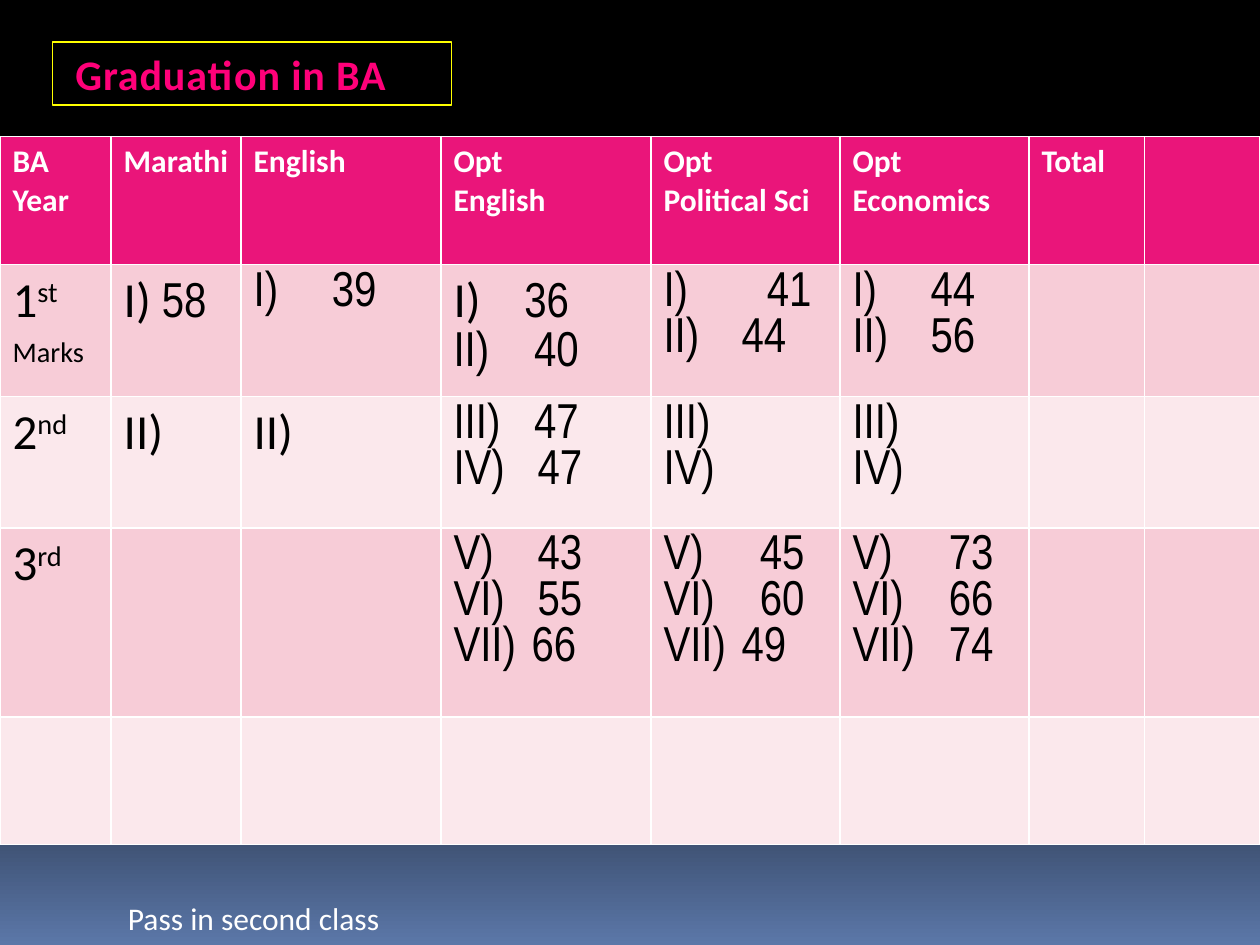
from lxml.etree import SubElement
from pptx import Presentation
from pptx.dml.color import RGBColor
from pptx.enum.text import MSO_ANCHOR, MSO_AUTO_SIZE, PP_ALIGN
from pptx.oxml.ns import qn
from pptx.util import Pt

COLORS = {
    "black": "000000", "white": "FFFFFF", "blue": "5B77A8",
    "yellow": "FFFF00", "pink": "FF0079", "dark pink": "B40055",
    "header": "EA157A", "odd row": "F7CCD7", "even row": "FBE8EC",
}
BODY, NARROW = "Calibri", "Arial Narrow"
COLUMN_WIDTHS = [63.5, 74.25, 114.25, 120, 108, 108, 66, 66]
ROW_HEIGHTS = [73, 74, 75, 108, 73]
LIST_INDENT = 44.64

HEADERS = ["BA\nYear", "Marathi", "English", "Opt\nEnglish",
           "Opt\nPolitical Sci", "Opt Economics", "Total"]
ORDINALS = [("1", "st"), ("2", "nd"), ("3", "rd")]
# (row, column): lines of (label, mark, tab position);
# a whole number as label starts an automatic Roman list there
MARKS = {
    (1, 2): [(1, "39", 0)],
    (1, 3): [("I)", "36", 40.5), ("II)", "40", 46)],
    (1, 4): [("I)", "41", 59), (2, "44", 0)],
    (1, 5): [(1, "44", 0), (2, "56", 0)],
    (2, 3): [("III)", "47", 46), ("IV)", "47", 48)],
    (2, 4): [("III)", "", 0), ("IV)", "", 0)],
    (2, 5): [("III)", "", 0), ("IV)", "", 0)],
    (3, 3): [("V)", "43", 48), ("VI)", "55", 48), (7, "66", 0)],
    (3, 4): [("V)", "45", 55), ("VI)", "60", 55), (7, "49", 0)],
    (3, 5): [("V)", "73", 55), ("VI)", "66", 55), ("VII)", "74", 55)],
}


def set_gradient(fill, stops):
    """Fill from top to bottom with two (position, colour name) stops."""
    fill.gradient()
    fill.gradient_angle = 270
    for stop, (position, name) in zip(fill.gradient_stops, stops):
        stop.position = position
        stop.color.rgb = RGBColor.from_string(COLORS[name])


def set_font(font, name, size, color, bold=False):
    font.name, font.size, font.bold = name, Pt(size), bold
    font.color.rgb = RGBColor.from_string(COLORS[color])


presentation = Presentation()
presentation.slide_width, presentation.slide_height = Pt(720), Pt(540)
slide = presentation.slides.add_slide(presentation.slide_layouts[5])
set_gradient(slide.background.fill, [(0.65, "black"), (1, "blue")])

# Title
title = slide.shapes.title
title.left, title.top, title.width, title.height = Pt(30), Pt(24), Pt(228), Pt(36)
title.line.color.rgb = RGBColor.from_string(COLORS["yellow"])
title.line.width = Pt(0.75)
title.text_frame.auto_size = MSO_AUTO_SIZE.NONE
title.text_frame.vertical_anchor = MSO_ANCHOR.MIDDLE
paragraph = title.text_frame.paragraphs[0]
paragraph.alignment = PP_ALIGN.LEFT
run = paragraph.add_run()
run.text = " Graduation in BA"
run.font.name, run.font.size, run.font.bold = BODY, Pt(24), True
set_gradient(run.font.fill, [(0.25, "pink"), (1, "dark pink")])
run.font._element.set("spc", "50")

# Table grid
table = slide.shapes.add_table(
    len(ROW_HEIGHTS), len(COLUMN_WIDTHS), Pt(0), Pt(78),
    Pt(sum(COLUMN_WIDTHS)), Pt(sum(ROW_HEIGHTS))).table
for column, width in zip(table.columns, COLUMN_WIDTHS):
    column.width = Pt(width)
for index, (row, height) in enumerate(zip(table.rows, ROW_HEIGHTS)):
    row.height = Pt(height)
    name = "header" if index == 0 else "odd row" if index % 2 else "even row"
    for cell in row.cells:
        cell.fill.solid()
        cell.fill.fore_color.rgb = RGBColor.from_string(COLORS[name])

for index, header in enumerate(HEADERS):
    frame = table.cell(0, index).text_frame
    frame.text = header
    for paragraph in frame.paragraphs:
        set_font(paragraph.font, BODY, 18, "white", True)

# Years, with raised suffixes
for index, (number, suffix) in enumerate(ORDINALS, start=1):
    frame = table.cell(index, 0).text_frame
    lines = [[(number, False), (suffix, True)]]
    if index == 1:
        lines.append([("Marks", True)])
    for line_index, line in enumerate(lines):
        paragraph = frame.add_paragraph() if line_index else frame.paragraphs[0]
        set_font(paragraph.font, BODY, 28, "black")
        for text, raised in line:
            run = paragraph.add_run()
            run.text = text
            if raised:
                run.font._element.set("baseline", "30000")

# Marathi and English
paragraph = table.cell(1, 1).text_frame.paragraphs[0]
SubElement(paragraph._p.get_or_add_pPr(), qn("a:buAutoNum"), type="romanUcParenR")
for text, name in [(" ", BODY), ("58", NARROW)]:
    run = paragraph.add_run()
    run.text = text
    set_font(run.font, name, 28, "black")
for column in (1, 2):
    paragraph = table.cell(2, column).text_frame.paragraphs[0]
    paragraph.text = "II)"
    set_font(paragraph.font, BODY, 28, "black")

# Marks by paper
for (row, column), lines in MARKS.items():
    frame = table.cell(row, column).text_frame
    for index, (label, mark, tab) in enumerate(lines):
        paragraph = frame.add_paragraph() if index else frame.paragraphs[0]
        properties = paragraph._p.get_or_add_pPr()
        if isinstance(label, int):
            properties.set("marL", str(Pt(LIST_INDENT)))
            properties.set("indent", str(-Pt(LIST_INDENT)))
            SubElement(properties, qn("a:buAutoNum"),
                       type="romanUcParenR", startAt=str(label))
            texts = [mark]
        elif mark:
            tabs = SubElement(properties, qn("a:tabLst"))
            SubElement(tabs, qn("a:tab"), pos=str(Pt(tab)), algn="l")
            texts = [label + "\t", mark]
        else:
            texts = [label]
        set_font(paragraph.font, NARROW, 28, "black")
        for text in texts:
            paragraph.add_run().text = text
# The first optional English label is set in the body font
table.cell(1, 3).text_frame.paragraphs[0].runs[0].font.name = BODY

# Result
result = slide.shapes.add_textbox(Pt(66), Pt(510), Pt(588), Pt(29))
result.text_frame.word_wrap = True
paragraph = result.text_frame.paragraphs[0]
paragraph.text = "Pass in second class"
set_font(paragraph.font, BODY, 18, "white")

presentation.save("out.pptx")
